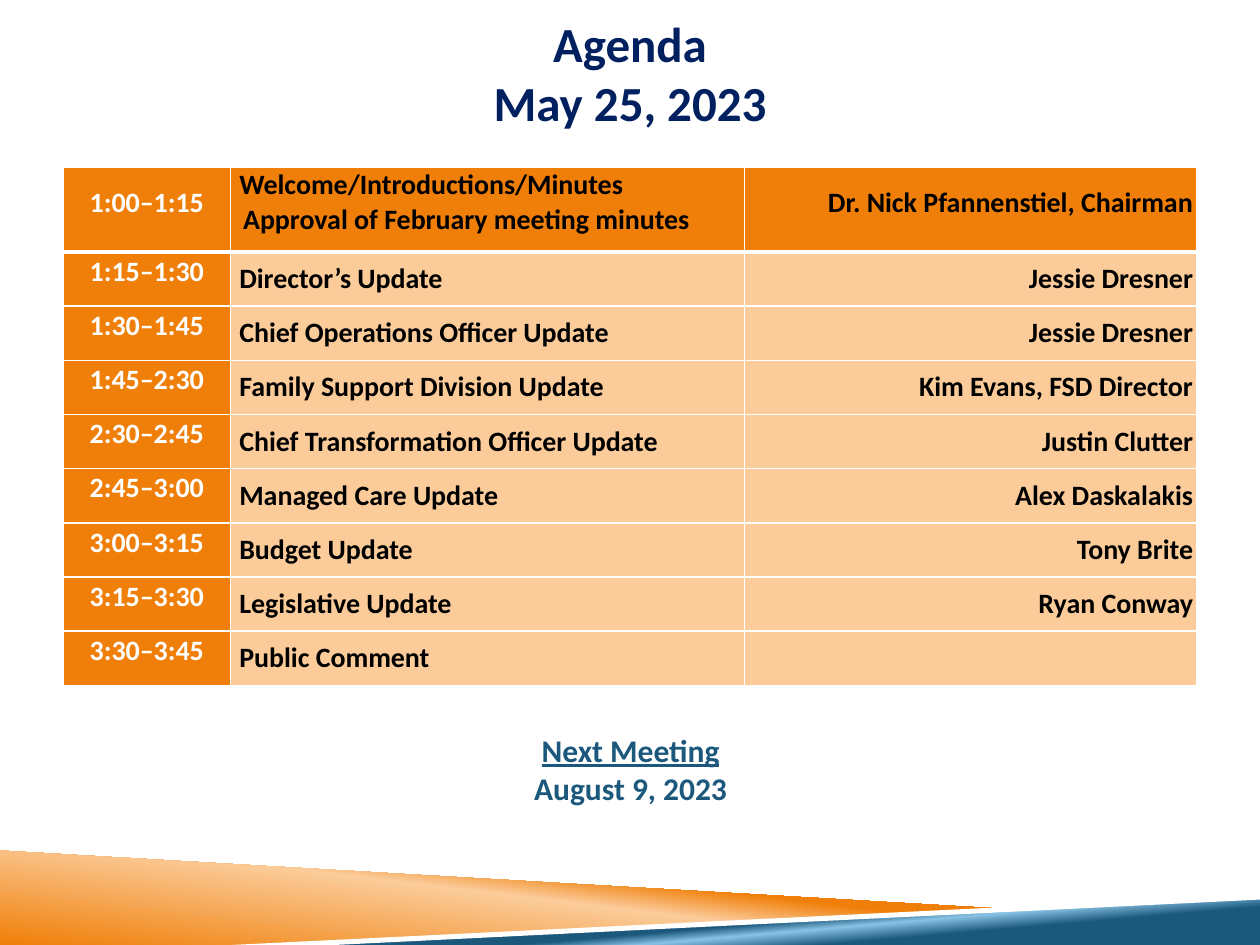
from lxml import etree
from pptx import Presentation
from pptx.dml.color import RGBColor
from pptx.enum.text import MSO_ANCHOR as Anchor, MSO_AUTO_SIZE as AutoSize, PP_ALIGN as Align
from pptx.oxml.ns import qn
from pptx.util import Inches, Pt

COLORS = {
    "orange": "F07F09", "peach": "FBCC9A", "blue": "1B587C", "sky": "89C3E5",
    "navy": "002060", "white": "FFFFFF", "black": "000000",
}
AGENDA = [
    ("1:00–1:15", "Welcome/Introductions/Minutes\nApproval of February meeting minutes",
     "Dr. Nick Pfannenstiel, Chairman"),
    ("1:15–1:30", "Director’s Update", "Jessie Dresner"),
    ("1:30–1:45", "Chief Operations Officer Update", "Jessie Dresner"),
    ("1:45–2:30", "Family Support Division Update", "Kim Evans, FSD Director"),
    ("2:30–2:45", "Chief Transformation Officer Update", "Justin Clutter"),
    ("2:45–3:00", "Managed Care Update", "Alex Daskalakis"),
    ("3:00–3:15", "Budget Update", "Tony Brite"),
    ("3:15–3:30", "Legislative Update", "Ryan Conway"),
    ("3:30–3:45", "Public Comment", ""),
]
SPARE_ROWS = 4
COLUMN_WIDTHS = [1.33, 4.08, 3.59]


def rgb(name):
    return RGBColor.from_string(COLORS[name])


def write_text(frame, text, size=16, color="black", align=Align.LEFT, line_spacing=None):
    """Fill a frame with one bold paragraph per line of text."""
    frame.text = text
    for paragraph in frame.paragraphs:
        paragraph.alignment = align
        paragraph.line_spacing = line_spacing
        font = paragraph.font
        font.name, font.size, font.bold = "Calibri", Pt(size), True
        font.color.rgb = rgb(color)


def add_polygon(slide, points, *stops, angle=0):
    """Draw an outline filled with one colour, or with (position, colour) stops."""
    corners = [(Inches(x), Inches(y)) for x, y in points]
    builder = slide.shapes.build_freeform(*corners[0], scale=1.0)
    builder.add_line_segments(corners[1:], close=True)
    shape = builder.convert_to_shape()
    shape.shadow.inherit = False
    shape.line.fill.background()
    if len(stops) == 1:
        shape.fill.solid()
        shape.fill.fore_color.rgb = rgb(stops[0])
        return
    shape.fill.gradient()
    shape.fill.gradient_angle = 360 - angle
    stop_list = shape.element.spPr.find(qn("a:gradFill")).find(qn("a:gsLst"))
    for old_stop in list(stop_list):
        stop_list.remove(old_stop)
    for position, color in stops:
        stop = etree.SubElement(stop_list, qn("a:gs"), pos=str(position * 1000))
        etree.SubElement(stop, qn("a:srgbClr"), val=COLORS[color])


def add_footer_bands(slide, left, top, width, height):
    right, bottom = left + width, top + height
    add_polygon(slide, [(left, top), (left + 7.92, top + 0.46), (left + 2, bottom), (left, bottom)],
                (0, "orange"), (52, "peach"), (66, "orange"), angle=277)
    add_polygon(slide, [(left + 1.98, bottom), (right, top + 0.37), (right, bottom)],
                (28, "blue"), (40, "sky"), (48, "blue"), angle=265)
    add_polygon(slide, [(right, top + 0.35), (left + 1.84, bottom), (left + 2.66, bottom),
                        (right, top + 0.39)], "white")


def place_title(slide, left, top, width, height):
    title = slide.shapes.title
    title.left, title.top = Inches(left), Inches(top)
    title.width, title.height = Inches(width), Inches(height)
    frame = title.text_frame
    frame.auto_size, frame.vertical_anchor = AutoSize.NONE, Anchor.MIDDLE
    frame.margin_left = frame.margin_right = 0
    write_text(frame, "Agenda\vMay 25, 2023", size=28, color="navy", align=Align.CENTER)


def format_cell(cell, fill, bottom_width=1):
    cell.margin_left = cell.margin_right = cell.margin_top = cell.margin_bottom = 0
    cell.vertical_anchor = Anchor.MIDDLE
    properties = cell._tc.get_or_add_tcPr()
    for side, width in (("L", 1), ("R", 1), ("T", 1), ("B", bottom_width)):
        border = etree.SubElement(properties, qn(f"a:ln{side}"), w=str(Pt(width)))
        solid = etree.SubElement(border, qn("a:solidFill"))
        etree.SubElement(solid, qn("a:srgbClr"), val=COLORS["white"])
    cell.fill.solid()
    cell.fill.fore_color.rgb = rgb(fill)


def add_agenda_table(slide, left, top, width, height):
    row_count = len(AGENDA) + SPARE_ROWS
    table = slide.shapes.add_table(row_count, len(COLUMN_WIDTHS), Inches(left), Inches(top),
                                   Inches(width), Inches(height)).table
    table.first_row = table.horz_banding = False
    for column, column_width in zip(table.columns, COLUMN_WIDTHS):
        column.width = Inches(column_width)
    row_heights = [0.67] + [0.43] * (len(AGENDA) - 1) + [0.29] * SPARE_ROWS
    entries = AGENDA + [("", "", "")] * SPARE_ROWS
    for index, (row_height, entry) in enumerate(zip(row_heights, entries)):
        table.rows[index].height = Inches(row_height)
        is_header, is_spare = index == 0, index >= len(AGENDA)
        for column, text in enumerate(entry):
            cell = table.cell(index, column)
            is_time = column == 0
            fill = "white" if is_spare else "orange" if is_header or is_time else "peach"
            format_cell(cell, fill, bottom_width=3 if is_header else 1)
            cell.margin_left = Inches(0.07 if column == 1 else 0)
            cell.margin_right = Inches(0.03 if column == 2 else 0)
            write_text(cell.text_frame, text, color="white" if is_time else "black",
                       align=(Align.CENTER, Align.LEFT, Align.RIGHT)[column],
                       line_spacing=Pt(11.2) if is_header or is_time else None)
    approval = table.cell(0, 1).text_frame.paragraphs[1]
    approval.line_spacing = None
    approval._p.get_or_add_pPr().set("marL", str(Inches(0.03)))


def add_next_meeting(slide, left, top, width, height):
    box = slide.shapes.add_textbox(Inches(left), Inches(top), Inches(width), Inches(height))
    frame = box.text_frame
    frame.word_wrap, frame.auto_size = False, AutoSize.SHAPE_TO_FIT_TEXT
    write_text(frame, "Next Meeting\nAugust 9, 2023", size=18, color="blue", align=Align.CENTER)
    frame.paragraphs[0].runs[0].font.underline = True


def main():
    presentation = Presentation()
    presentation.slide_width, presentation.slide_height = Inches(10), Inches(7.5)
    slide = presentation.slides.add_slide(presentation.slide_layouts[5])
    add_footer_bands(slide, 0, 6.75, 10, 0.75)
    place_title(slide, 0.69, 0, 8.62, 1.15)
    add_agenda_table(slide, 0.5, 1.33, 9, 5.25)
    add_next_meeting(slide, 4.13, 5.75, 1.75, 0.71)
    presentation.save("out.pptx")


if __name__ == "__main__":
    main()
